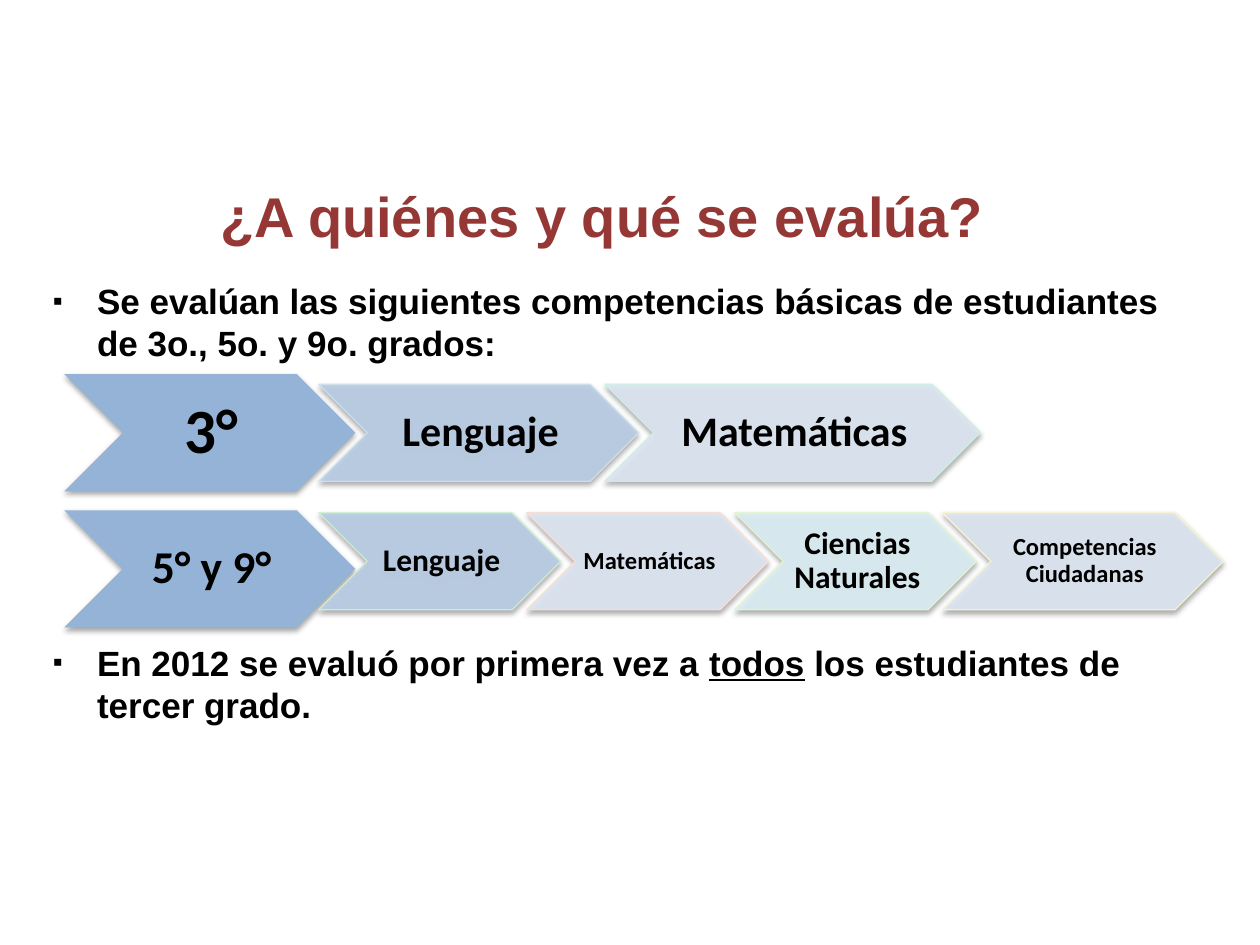
import pptx
import pptx.dml.color
import pptx.enum.shapes
import pptx.enum.text
import pptx.oxml
import pptx.oxml.ns
import pptx.util

COLUMN = pptx.util.Inches(10) // 100
ROW = pptx.util.Inches(7.5) // 75
NS = pptx.oxml.ns.nsdecls("a")
ALIGN = pptx.enum.text.PP_ALIGN
ANCHOR = pptx.enum.text.MSO_ANCHOR

HEAD_LEFT, HEAD_WIDTH, HEAD_HEIGHT = 5.1, 23.1, 9.3
LINK_LEFT, LINK_HEIGHT, OVERLAP = 25.3, 7.7, 2.7


def color(value):
    return pptx.dml.color.RGBColor.from_string(value)


def area(left, top, width, height):
    return round(left * COLUMN), round(top * ROW), round(width * COLUMN), round(height * ROW)


def set_insets(frame, left, top, right, bottom):
    frame.margin_left, frame.margin_right = round(left * COLUMN), round(right * COLUMN)
    frame.margin_top, frame.margin_bottom = round(top * ROW), round(bottom * ROW)


def style_run(run, font_name, size, ink="000000"):
    run.font.name = font_name
    run.font.size = pptx.util.Pt(size)
    run.font.bold = True
    run.font.color.rgb = color(ink)


def add_title(slide, text):
    frame = slide.shapes.add_textbox(*area(2.8, 13.6, 90, 8.1)).text_frame
    frame.word_wrap = True
    frame.vertical_anchor = ANCHOR.MIDDLE
    set_insets(frame, 1, 0.5, 1, 1.6)
    frame.text = text
    frame.paragraphs[0].alignment = ALIGN.CENTER
    style_run(frame.paragraphs[0].runs[0], "Arial", 32, "953735")


def add_bullet(slide, top, parts, underlined=None):
    frame = slide.shapes.add_textbox(*area(3.5, top, 92.1, 7.5)).text_frame
    frame.word_wrap = True
    set_insets(frame, 0.7, 0.4, 0.7, 0.4)
    statement = frame.paragraphs[0]
    properties = statement._p.get_or_add_pPr()
    hang = round(3.5 * COLUMN)
    properties.set("marL", str(hang))
    properties.set("indent", str(-hang))
    for tag in ('buSzPct {} val="80000"', 'buFont {} typeface="Arial"', 'buChar {} char="▪"'):
        properties.append(pptx.oxml.parse_xml(f"<a:{tag.format(NS)}/>"))
    for part in parts:
        run = statement.add_run()
        run.text = part
        style_run(run, "Arial", 20)
        if part == underlined:
            run.font.underline = True


def add_shadow(shape):
    shape.shadow.inherit = False
    effects = shape._element.spPr.find(pptx.oxml.ns.qn("a:effectLst"))
    effects.append(pptx.oxml.parse_xml(
        f'<a:outerShdw {NS} blurRad="40000" dist="23000" dir="5400000" rotWithShape="0">'
        '<a:srgbClr val="000000"><a:alpha val="35000"/></a:srgbClr></a:outerShdw>'))


def make_translucent(fill):
    fill._xPr.find(".//" + pptx.oxml.ns.qn("a:srgbClr")).append(
        pptx.oxml.parse_xml(f'<a:alpha {NS} val="90000"/>'))


def add_chevron(slide, place, text, size, fill, outline=None):
    chevron = slide.shapes.add_shape(pptx.enum.shapes.MSO_SHAPE.CHEVRON, *area(*place))
    chevron.fill.solid()
    chevron.fill.fore_color.rgb = color(fill)
    if outline:
        make_translucent(chevron.fill)
        chevron.line.color.rgb = color(outline)
        chevron.line.width = pptx.util.Pt(0.75)
        make_translucent(chevron.line.fill)
    else:
        chevron.line.fill.background()
    add_shadow(chevron)
    frame = chevron.text_frame
    frame.word_wrap = True
    frame.vertical_anchor = ANCHOR.MIDDLE
    set_insets(frame, 0.3, 0.2, 0, 0.2)
    frame.text = text
    label = frame.paragraphs[0]
    label.alignment = ALIGN.CENTER
    label.line_spacing = 0.9
    style_run(label.runs[0], "Calibri", size)


def add_grade_row(slide, head_top, link_top, grade, grade_size, subjects):
    add_chevron(slide, (HEAD_LEFT, head_top, HEAD_WIDTH, HEAD_HEIGHT), grade, grade_size, "95B3D7")
    left = LINK_LEFT
    for subject, width, size, fill, outline in subjects:
        add_chevron(slide, (left, link_top, width, LINK_HEIGHT), subject, size, fill, outline)
        left += width - OVERLAP


def main():
    deck = pptx.Presentation()
    deck.slide_width, deck.slide_height = 100 * COLUMN, 75 * ROW
    slide = deck.slides.add_slide(deck.slide_layouts[6])
    add_bullet(slide, 21.8, [
        "Se evalúan las siguientes competencias básicas de estudiantes de 3o., 5o. y 9o. grados:"])
    add_bullet(slide, 50.5, [
        "En 2012 se evaluó por primera vez a ", "todos", " los estudiantes de tercer grado."], "todos")
    add_grade_row(slide, 29.7, 30.5, "3°", 36, [
        ("Lenguaje", 25.4, 24, "B9CDE5", "D0E3EA"),
        ("Matemáticas", 29.8, 24, "DCE6F2", "CFEFE5"),
    ])
    add_grade_row(slide, 40.5, 40.7, "5° y 9°", 26, [
        ("Lenguaje", 19.2, 18, "B9CDE5", "CFF2D2"),
        ("Matemáticas", 19.2, 14, "DCE6F2", "FCDDCF"),
        ("Ciencias Naturales", 19.2, 18, "DBEEF4", "E2F6CE"),
        ("Competencias Ciudadanas", 22.3, 14, "DCE6F2", "F9F5CF"),
    ])
    add_title(slide, "¿A quiénes y qué se evalúa?")
    deck.save("out.pptx")


if __name__ == "__main__":
    main()
